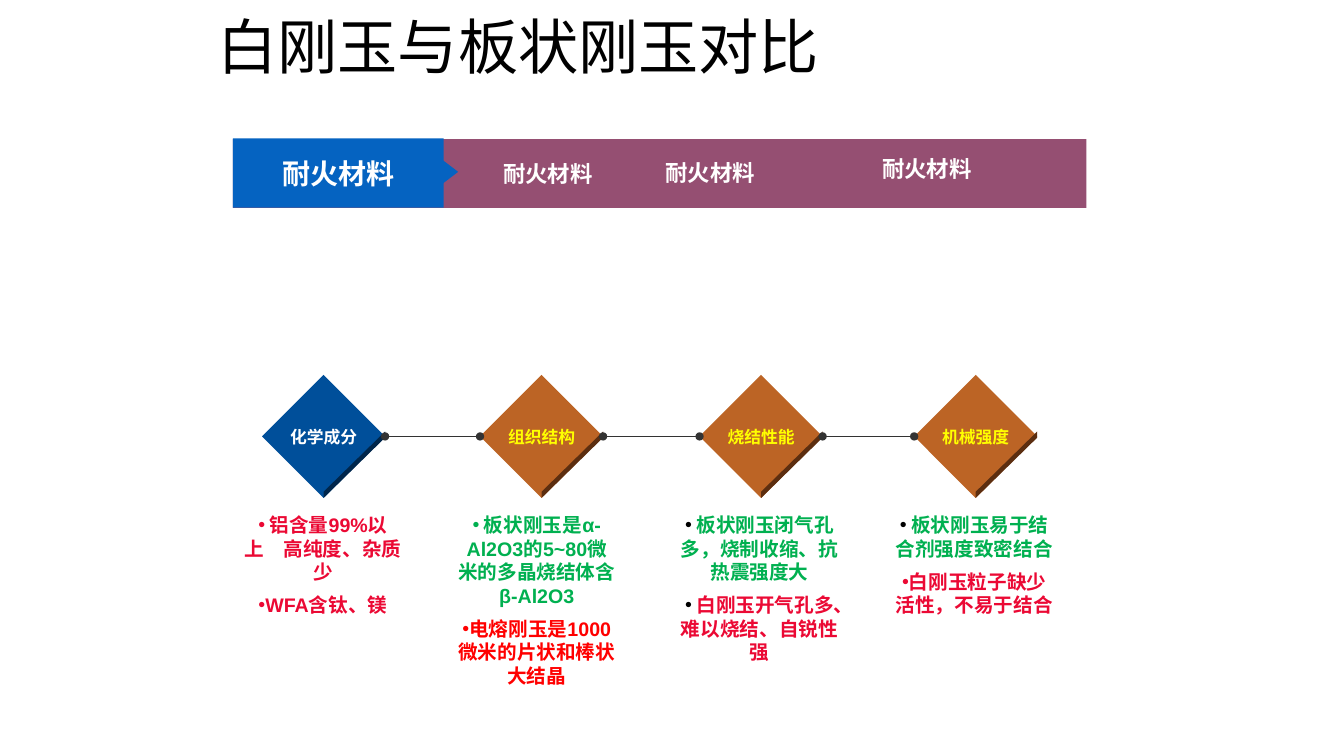
from dataclasses import dataclass
from lxml import etree
from pptx import Presentation
from pptx.dml.color import RGBColor
from pptx.enum import shapes, text
from pptx.oxml import ns
from pptx.util import Pt

WHITE, BLACK, YELLOW = "FFFFFF", "000000", "FFFF00"
RED, PINK, GREEN = "FF0000", "EB0934", "00B050"
BLUE, PLUM, ORANGE, LINE = "0563C1", "954F72", "BC6425", "333333"
SIDE, MID = 87.9, 311.75
KIND = shapes.MSO_SHAPE


@dataclass
class Box:
    left: float
    top: float
    width: float
    height: float


@dataclass
class Label:
    words: str
    box: Box
    size: float
    hue: str = WHITE
    shade: bool = False


@dataclass
class Point:
    words: str
    hue: str
    dot: str


@dataclass
class Stage:
    name: str
    left: float
    note: float
    face: str
    edge: str
    ink: str
    points: list[Point]


def color(code: str) -> RGBColor:
    return RGBColor.from_string(code)


def child(parent, tag: str, **attrs: str):
    node = etree.SubElement(parent, ns.qn(tag))
    for key, value in attrs.items():
        node.set(key, value)
    return node


def paint(shape, code: str) -> None:
    shape.shadow.inherit = False
    shape.fill.solid()
    shape.fill.fore_color.rgb = color(code)
    shape.line.fill.background()


def add_shape(slide, kind, box: Box, code: str, turn: float = 0) -> None:
    shape = slide.shapes.add_shape(
        kind, Pt(box.left), Pt(box.top), Pt(box.width), Pt(box.height))
    shape.rotation = turn
    paint(shape, code)


def add_frame(slide, box: Box):
    frame = slide.shapes.add_textbox(
        Pt(box.left), Pt(box.top), Pt(box.width), Pt(box.height)).text_frame
    frame.word_wrap = True
    return frame


def add_run(para, words: str, size: float, code: str,
            face: str = "Arial", bold: bool = True):
    run = para.add_run()
    run.text = words
    run.font.size = Pt(size)
    run.font.bold = bold
    run.font.color.rgb = color(code)
    run.font.name = face
    return run


def add_label(slide, label: Label) -> None:
    para = add_frame(slide, label.box).paragraphs[0]
    para.alignment = text.PP_ALIGN.CENTER
    run = add_run(para, label.words, label.size, label.hue)
    if label.shade:
        props = run.font._element
        glow = child(props, "a:effectLst")
        props.find(ns.qn("a:solidFill")).addnext(glow)
        cast = child(glow, "a:outerShdw", dist="35921", dir="2700000")
        child(cast, "a:srgbClr", val=BLACK)


def add_points(slide, stage: Stage) -> None:
    frame = add_frame(slide, Box(stage.note, 363, 127.5, 120))
    for index, point in enumerate(stage.points):
        para = frame.add_paragraph() if index else frame.paragraphs[0]
        para.alignment = text.PP_ALIGN.CENTER
        para.space_before = Pt(6.8 if index else 0)
        props = para._p.get_or_add_pPr()
        props.set("marL", "0")
        props.set("indent", "0")
        child(child(props, "a:buClr"), "a:srgbClr", val=point.dot)
        child(props, "a:buFont", typeface="Arial")
        child(props, "a:buChar", char="•")
        add_run(para, point.words, 14, point.hue)


def add_stage(slide, stage: Stage) -> None:
    top = MID - SIDE / 2
    add_shape(slide, KIND.DIAMOND, Box(stage.left, top, SIDE, SIDE), stage.face)
    rim = [(Pt(stage.left + x * SIDE), Pt(top + y * SIDE))
           for x, y in ((1, 0.46), (1, 0.51), (0.5, 1), (0.5, 0.95))]
    maker = slide.shapes.build_freeform(*rim[0])
    maker.add_line_segments(rim[1:], close=True)
    paint(maker.convert_to_shape(), stage.edge)
    box = Box(stage.left + 9.7, MID - 10.8, 68.5, 21.6)
    add_label(slide, Label(stage.name, box, 12, stage.ink))
    add_points(slide, stage)


def add_link(slide, start: float, end: float) -> None:
    link = slide.shapes.add_connector(
        shapes.MSO_CONNECTOR.STRAIGHT, Pt(start), Pt(MID), Pt(end), Pt(MID))
    link.line.color.rgb = color(LINE)
    link.line.width = Pt(1)
    stroke = link.line._get_or_add_ln()
    for tag in ("a:headEnd", "a:tailEnd"):
        child(stroke, tag, type="oval")
    child(link._element.spPr, "a:effectLst")


TOPIC = "耐火材料"
LABELS = [
    Label(TOPIC, Box(324, 110.9, 134.6, 26.6), 16),
    Label(TOPIC, Box(169.2, 108, 144.7, 31), 20, shade=True),
    Label(TOPIC, Box(441.4, 110.2, 131.8, 26.6), 16),
    Label(TOPIC, Box(596.2, 107.3, 131.8, 26.6), 16),
]
STAGES = [
    Stage("化学成分", 187.2, 167, "004F9A", "00264B", WHITE, [
        Point(" 铝含量99%以上　高纯度、杂质少", PINK, PINK),
        Point("WFA含钛、镁", PINK, PINK)]),
    Stage("组织结构", 342.9, 319.7, ORANGE, "5C2E10", YELLOW, [
        Point(" 板状刚玉是α-Al2O3的5~80微米的多晶烧结体含β-Al2O3", GREEN, GREEN),
        Point("电熔刚玉是1000微米的片状和棒状大结晶", RED, RED)]),
    Stage("烧结性能", 499.7, 478.8, ORANGE, "5C2E10", YELLOW, [
        Point(" 板状刚玉闭气孔多，烧制收缩、抗热震强度大", GREEN, BLACK),
        Point(" 白刚玉开气孔多、难以烧结、自锐性强", PINK, BLACK)]),
    Stage("机械强度", 653, 632.2, ORANGE, "5C2E10", YELLOW, [
        Point(" 板状刚玉易于结合剂强度致密结合", GREEN, BLACK),
        Point("白刚玉粒子缺少活性，不易于结合", PINK, PINK)]),
]


def main() -> None:
    deck = Presentation()
    deck.slide_width, deck.slide_height = Pt(960), Pt(540)
    slide = deck.slides.add_slide(deck.slide_layouts[6])

    title = add_frame(slide, Box(148.3, 1.4, 648, 68.4))
    title.vertical_anchor = text.MSO_ANCHOR.MIDDLE
    title.paragraphs[0].line_spacing = 0.9
    add_run(title.paragraphs[0], "白刚玉与板状刚玉对比", 43, BLACK, "Calibri", False)

    add_shape(slide, KIND.RECTANGLE, Box(166.3, 99.4, 609.8, 49), PLUM)
    add_shape(slide, KIND.RECTANGLE, Box(166.3, 98.9, 150.7, 49.5), BLUE)
    add_shape(slide, KIND.ISOSCELES_TRIANGLE, Box(308.2, 115.2, 23, 15.1), BLUE, 90)
    for label in LABELS:
        add_label(slide, label)

    for stage in STAGES:
        add_stage(slide, stage)
    for here, after in zip(STAGES, STAGES[1:]):
        add_link(slide, here.left + SIDE, after.left)
    deck.save("out.pptx")


if __name__ == "__main__":
    main()
